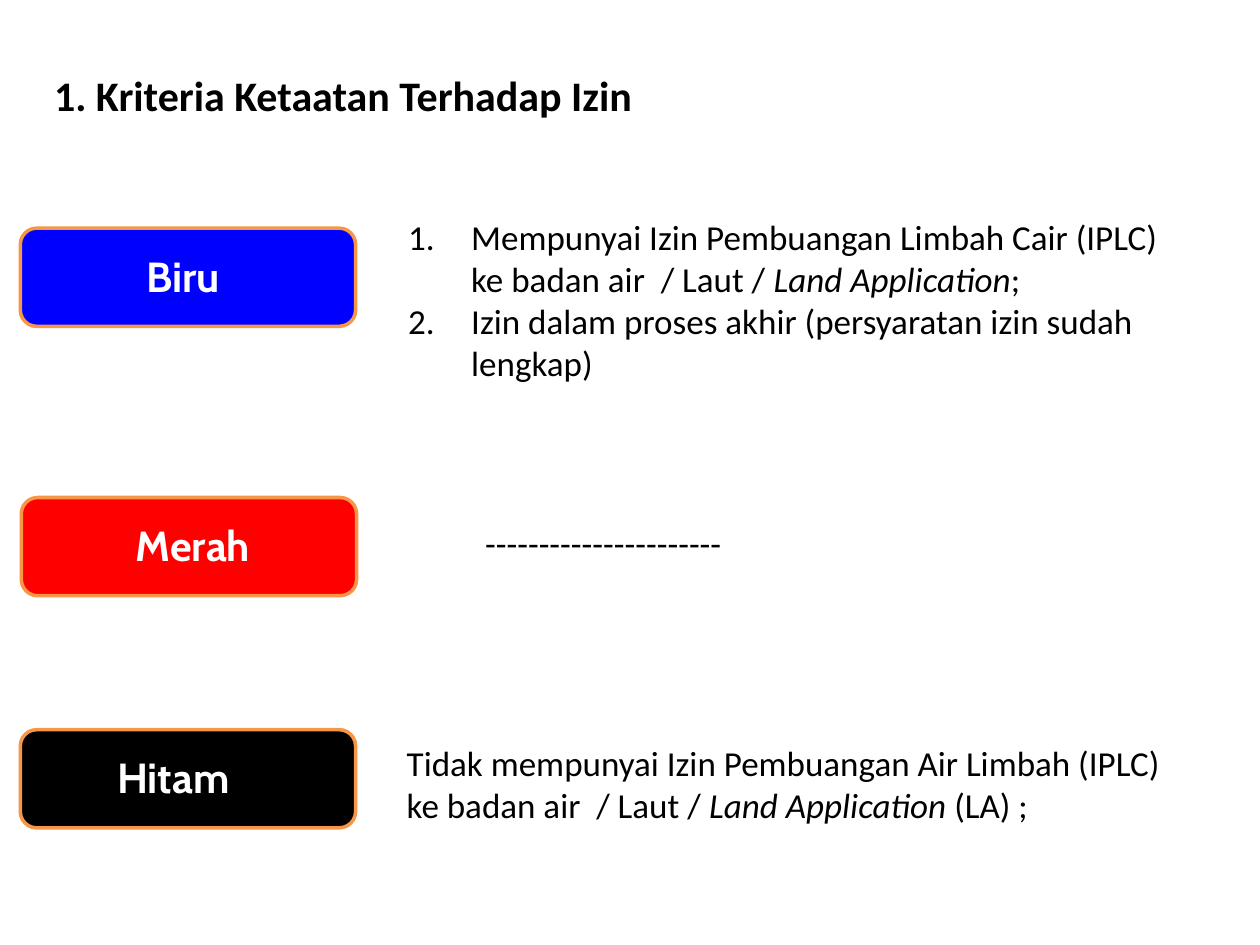
import pptx
import pptx.dml.color
import pptx.enum.shapes
import pptx.enum.text
import pptx.util
from pptx.util import Cm
import lxml.etree


def rgb(value):
    return pptx.dml.color.RGBColor.from_string(value)


def add_text(shapes, box, paragraphs, font, size, color="000000",
             bold=False, wrap=True, numbered=False):
    tb = shapes.add_textbox(*map(Cm, box))
    tf = tb.text_frame
    tf.word_wrap = wrap
    tf.auto_size = pptx.enum.text.MSO_AUTO_SIZE.SHAPE_TO_FIT_TEXT
    for i, runs in enumerate(paragraphs):
        p = tf.add_paragraph() if i else tf.paragraphs[0]
        if numbered:
            number_paragraph(p)
        for text, italic in runs:
            r = p.add_run()
            r.text = text
            r.font.name = font
            r.font.size = pptx.util.Pt(size)
            r.font.bold = bold
            r.font.italic = italic
            r.font.color.rgb = rgb(color)


def number_paragraph(p):
    pPr = p._p.get_or_add_pPr()
    pPr.set("marL", str(Cm(1.27)))
    pPr.set("indent", str(-Cm(1.27)))
    bullet = lxml.etree.SubElement(pPr, pptx.oxml.ns.qn("a:buAutoNum"))
    bullet.set("type", "arabicPeriod")


def add_title(s, box, text):
    add_text(s.shapes, box, [[(text, False)]], "Calibri", 24,
             bold=True, wrap=False)


def add_rating(s, box, name, fill, label_dx, label_width):
    left, top, width, height = box
    group = s.shapes.add_group_shape()
    sp = group.shapes.add_shape(
        pptx.enum.shapes.MSO_SHAPE.ROUNDED_RECTANGLE, *map(Cm, box))
    sp.shadow.inherit = False
    sp.fill.solid()
    sp.fill.fore_color.rgb = rgb(fill)
    sp.line.color.rgb = rgb("F79646")
    sp.line.width = pptx.util.Pt(2)
    label_box = (left + label_dx, top + 0.32, label_width, 1.27)
    add_text(group.shapes, label_box, [[(name, False)]], "Cabin", 24,
             color="FFFFFF", bold=True, wrap=False)


def add_criteria(s, box, paragraphs, numbered=False):
    add_text(s.shapes, box, paragraphs, "Calibri", 20, numbered=numbered)


def main():
    prs = pptx.Presentation()
    prs.slide_width, prs.slide_height = Cm(25.4), Cm(19.05)
    s = prs.slides.add_slide(prs.slide_layouts[6])

    add_title(s, (0.84, 1.27, 12.27, 1.27),
              "1. Kriteria Ketaatan Terhadap Izin")

    ratings = [
        (0.41, 4.6, "Biru", "0000FF", 2.29, 2.03),
        (0.43, 10.03, "Merah", "FF0000", 2.06, 2.97),
        (0.41, 14.71, "Hitam", "000000", 1.7, 3.43),
    ]
    for left, top, *rating in ratings:
        add_rating(s, (left, top, 6.76, 1.98), *rating)

    add_criteria(s, (7.98, 4.22, 15.72, 3.68), [
        [("Mempunyai Izin Pembuangan Limbah Cair (IPLC) "
          "ke badan air  / Laut / ", False),
         ("Land Application", True), (";", False)],
        [("Izin dalam proses akhir (persyaratan izin sudah lengkap)", False)],
    ], numbered=True)
    add_criteria(s, (9.53, 10.39, 9.73, 1.12), [[("-" * 22, False)]])
    add_criteria(s, (7.95, 14.83, 15.75, 1.96), [
        [("Tidak mempunyai Izin Pembuangan Air Limbah (IPLC) "
          "ke badan air  / Laut / ", False),
         ("Land Application ", True), ("(LA) ;", False)],
    ])

    prs.save("out.pptx")


if __name__ == "__main__":
    main()
